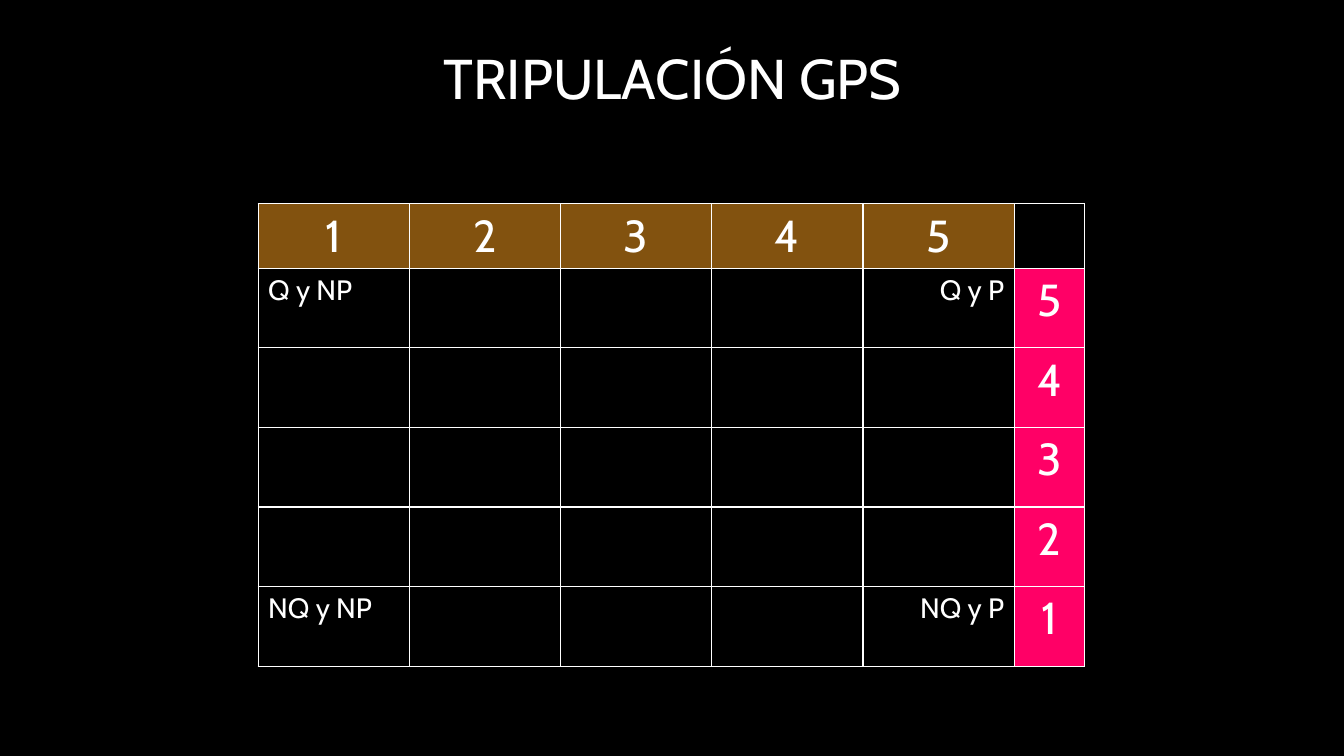
from lxml import etree
from pptx import Presentation
from pptx.dml.color import RGBColor
from pptx.enum import text
from pptx.oxml import ns
from pptx.util import Inches, Pt

TITLE = "TRIPULACIÓN GPS"
GRID = [
    ["1", "2", "3", "4", "5", ""],
    ["Q y NP", "", "", "", "Q y P", "5"],
    ["", "", "", "", "", "4"],
    ["", "", "", "", "", "3"],
    ["", "", "", "", "", "2"],
    ["NQ y NP", "", "", "", "NQ y P", "1"],
]
COL_WIDTHS = [1.5] * 5 + [0.7]
ROW_HEIGHTS = [0.64] + [0.79] * 5
LEFT, TOP = 2.56, 2.02
LAST_COL = len(COL_WIDTHS) - 1

FONT = "Cabin"
BLACK = RGBColor(0x00, 0x00, 0x00)
WHITE = RGBColor(0xFF, 0xFF, 0xFF)
BROWN = RGBColor(0x82, 0x52, 0x0F)
PINK = RGBColor(0xFF, 0x00, 0x66)
ALIGN = text.PP_ALIGN


def write(tf, words, size, align):
    tf.text = words
    p = tf.paragraphs[0]
    p.alignment = align
    for r in p.runs:
        r.font.name = FONT
        r.font.size = Pt(size)
        r.font.color.rgb = WHITE


def add_borders(cell):
    """Draw all four cell edges; call before filling the cell."""
    tc_pr = cell._tc.get_or_add_tcPr()
    for edge in ("a:lnL", "a:lnR", "a:lnT", "a:lnB"):
        ln = etree.SubElement(tc_pr, ns.qn(edge), w=str(Pt(1)))
        fill = etree.SubElement(ln, ns.qn("a:solidFill"))
        etree.SubElement(fill, ns.qn("a:srgbClr"), val=str(WHITE))


def cell_style(row, col):
    """Return fill, text size and alignment for a grid position."""
    if row == 0 and col < LAST_COL:
        return BROWN, 32, ALIGN.CENTER
    if row > 0 and col == LAST_COL:
        return PINK, 32, ALIGN.CENTER
    return None, 20, ALIGN.LEFT if col == 0 else ALIGN.RIGHT


def add_title(s):
    tf = s.shapes.add_textbox(Inches(2.17), Inches(0.3), Inches(9), Inches(0.93)).text_frame
    tf.word_wrap = True
    tf.vertical_anchor = text.MSO_ANCHOR.MIDDLE
    write(tf, TITLE, 40, ALIGN.CENTER)


def add_grid(s):
    table = s.shapes.add_table(
        len(GRID), len(COL_WIDTHS), Inches(LEFT), Inches(TOP),
        Inches(sum(COL_WIDTHS)), Inches(sum(ROW_HEIGHTS))).table
    table.first_row = table.horz_banding = False
    for column, width in zip(table.columns, COL_WIDTHS):
        column.width = Inches(width)
    for row, height in zip(table.rows, ROW_HEIGHTS):
        row.height = Inches(height)

    for i, labels in enumerate(GRID):
        for j, label in enumerate(labels):
            cell = table.cell(i, j)
            color, size, align = cell_style(i, j)
            add_borders(cell)
            if color is None:
                cell.fill.background()
            else:
                cell.fill.solid()
                cell.fill.fore_color.rgb = color
            if label:
                write(cell.text_frame, label, size, align)


def main():
    prs = Presentation()
    prs.slide_width, prs.slide_height = Inches(13.33), Inches(7.5)
    s = prs.slides.add_slide(prs.slide_layouts[6])
    s.background.fill.solid()
    s.background.fill.fore_color.rgb = BLACK
    add_title(s)
    add_grid(s)
    prs.save("out.pptx")


if __name__ == "__main__":
    main()
